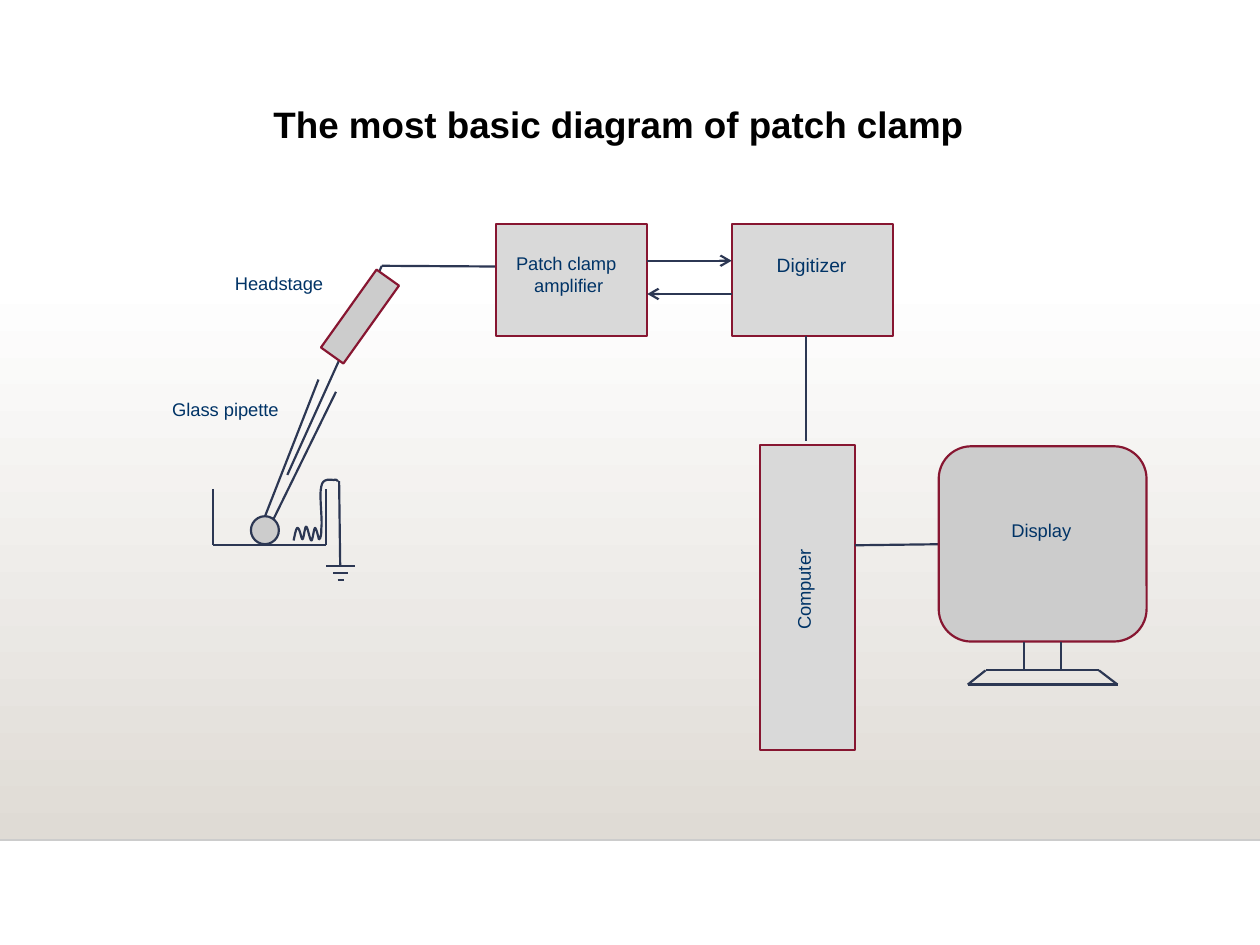
from itertools import pairwise

from lxml import etree
from pptx import Presentation
from pptx.dml.color import RGBColor
from pptx.enum import shapes, text
from pptx.oxml import ns
from pptx.util import Pt

COLORS = {
    "title": "000000", "label": "003366", "wire": "2C3753", "border": "871631",
    "panel": "D9D9D9", "device": "CCCCCC", "band_top": "FFFFFF",
    "band_bottom": "DFDBD5", "rule": "CCCCCC",
}
FONT = "Arial"
LINE_WIDTH = 1.25
CURVE_STEPS = 8
# Bath electrode, in hundredths of an inch: start, then Bézier controls and ends
COIL_UNIT = 0.72
COIL_START = (0, 50)
COIL_CURVES = [
    ((1, 45), (2, 40), (3, 40)), ((5, 40), (6, 49), (7, 49)),
    ((8, 49), (9, 38), (10, 39)), ((11, 39), (13, 50), (14, 50)),
    ((15, 51), (16, 40), (17, 40)), ((18, 40), (20, 49), (20, 49)),
    ((21, 49), (22, 47), (22, 40)), ((23, 33), (20, 13), (22, 7)),
    ((23, 0), (30, 2), (32, 2)), ((34, 1), (35, 3), (35, 3)),
]


def rgb(name):
    return RGBColor.from_string(COLORS[name])


def add_block(page, kind, left, top, width, height, fill, border="border"):
    block = page.shapes.add_shape(kind, Pt(left), Pt(top), Pt(width), Pt(height))
    block.shadow.inherit = False
    block.fill.solid()
    block.fill.fore_color.rgb = rgb(fill)
    block.line.color.rgb = rgb(border)
    block.line.width = Pt(LINE_WIDTH)
    return block


def add_line(page, start, end, color="wire", width=LINE_WIDTH, arrow=False):
    line = page.shapes.add_connector(
        shapes.MSO_CONNECTOR.STRAIGHT, *(Pt(value) for value in (*start, *end)))
    line.line.color.rgb = rgb(color)
    line.line.width = Pt(width)
    if arrow:
        etree.SubElement(line.line._get_or_add_ln(), ns.qn("a:tailEnd"), type="arrow")
    etree.SubElement(line._element.spPr, ns.qn("a:effectLst"))


def add_path(page, points):
    """Join consecutive points with straight lines."""
    for start, end in pairwise(points):
        add_line(page, start, end)


def add_label(page, left, top, width, height, *lines, size=10.5):
    box = page.shapes.add_textbox(Pt(left), Pt(top), Pt(width), Pt(height))
    frame = box.text_frame
    frame.word_wrap = True
    frame.text = "\n".join(lines)
    for para in frame.paragraphs:
        para.alignment = text.PP_ALIGN.CENTER
        para.font.name = FONT
        para.font.size = Pt(size)
        para.font.color.rgb = rgb("label")
    return box


def add_backdrop(page, left, top, width, height):
    band = page.shapes.add_shape(
        shapes.MSO_SHAPE.RECTANGLE, Pt(left), Pt(top), Pt(width), Pt(height))
    band.shadow.inherit = False
    band.line.fill.background()
    band.fill.gradient()
    band.fill.gradient_angle = 270
    for stop, name in zip(band.fill.gradient_stops, ("band_top", "band_bottom")):
        stop.color.rgb = rgb(name)
    bottom = top + height
    add_line(page, (left, bottom), (left + width, bottom), "rule", 1)


def set_title(page, left, top, width, height):
    title = page.shapes.title
    title.left, title.top, title.width, title.height = map(Pt, (left, top, width, height))
    frame = title.text_frame
    frame.text = "The most basic diagram of patch clamp"
    frame.vertical_anchor = text.MSO_ANCHOR.TOP
    para = frame.paragraphs[0]
    para.alignment = text.PP_ALIGN.CENTER
    para.font.name = FONT
    para.font.size = Pt(21)
    para.font.bold = True
    para.font.color.rgb = rgb("title")


def bezier(start, first, second, end):
    """Points along a cubic curve, without its start."""
    for step in range(1, CURVE_STEPS + 1):
        t = step / CURVE_STEPS
        weights = ((1 - t) ** 3, 3 * t * (1 - t) ** 2, 3 * t * t * (1 - t), t ** 3)
        yield tuple(sum(w * p[axis] for w, p in zip(weights, (start, first, second, end)))
                    for axis in (0, 1))


def add_coil(page, left, top):
    points = [COIL_START]
    for curve in COIL_CURVES:
        points.extend(bezier(points[-1], *curve))
    placed = [(Pt(left + x * COIL_UNIT), Pt(top + y * COIL_UNIT)) for x, y in points]
    builder = page.shapes.build_freeform(*placed[0])
    builder.add_line_segments(placed[1:], close=False)
    coil = builder.convert_to_shape()
    coil.shadow.inherit = False
    coil.fill.background()
    coil.line.color.rgb = rgb("wire")
    coil.line.width = Pt(LINE_WIDTH)


def add_ground(page, center, top):
    add_line(page, (center - 1, top - 48.3), (center - 0.4, top))
    for drop, width in ((0, 16.6), (4.3, 8.6), (7.9, 3.6)):
        add_line(page, (center - width / 2, top + drop), (center + width / 2, top + drop))


def add_recording_rig(page, left, top):
    """Bath with cell, pipette, headstage and grounded electrode."""
    def at(x, y):
        return left + x, top + y

    add_path(page, [at(41.7, 143.4), at(41.7, 175.4), at(106.5, 175.4), at(106.5, 143.4)])
    add_block(page, shapes.MSO_SHAPE.OVAL, *at(63.4, 159), 16, 16, "device", "wire")
    add_line(page, at(71.6, 158.6), at(102, 80.9))
    add_line(page, at(76.4, 160.4), at(112, 87.9))
    add_path(page, [at(84.2, 135.4), at(138.2, 15.9), at(218.8, 16.4)])
    add_coil(page, *at(87.8, 136.9))
    add_ground(page, *at(114.8, 187.3))
    headstage = add_block(
        page, shapes.MSO_SHAPE.RECTANGLE, *at(117.8, 17.6), 15.8, 54.7, "device")
    headstage.rotation = 35.5
    add_label(page, *at(2.1, 87.9), 93.6, 20.2, "Glass pipette")
    add_label(page, *at(41.7, 15.9), 75.6, 20.2, "Headstage")


def add_signal_chain(page, left, top):
    """Amplifier and digitizer, with the line down to the computer."""
    height, amplifier, digitizer = 64, 86.4, 92
    far = left + 134.6
    for x, width in ((left, amplifier), (far, digitizer)):
        add_block(page, shapes.MSO_SHAPE.RECTANGLE, x, top, width, height, "panel")
    near = left + amplifier
    add_line(page, (near, top + 21), (far, top + 21), arrow=True)
    add_line(page, (far, top + 40), (near, top + 40), arrow=True)
    add_line(page, (left + 177.3, top + height), (left + 177.3, top + 124))
    add_label(page, left - 5.6, top + 12.4, 91.4, 32.4, "Patch clamp", " amplifier")
    add_label(page, far, top + 13, 91.4, 20.9, "Digitizer", size=11)


def add_computer(page, left, top):
    width, height = 54.4, 174.2
    add_block(page, shapes.MSO_SHAPE.RECTANGLE, left, top, width, height, "panel")
    add_line(page, (left + width, top + 57.4), (left + 102.2, top + 56.8))
    label = add_label(page, left - 41.8, top + 72, 135.4, 21.6, "Computer")
    label.rotation = 270


def add_display(page, left, top):
    width, height = 118.8, 111.6
    shelf, floor = top + 128.1, top + 136.2
    add_block(page, shapes.MSO_SHAPE.ROUNDED_RECTANGLE, left, top, width, height, "device")
    base = [(left + 16.6, floor), (left + 102.2, floor),
            (left + 91.6, shelf), (left + 26.8, shelf)]
    add_path(page, base + base[:1])
    for x in (48.8, 70):
        add_line(page, (left + x, top + height), (left + x, shelf))
    add_label(page, left + 13, top + 38.2, 91.4, 26.6, "Display")


def main():
    deck = Presentation()
    deck.slide_width, deck.slide_height = Pt(720), Pt(540)
    page = deck.slides.add_slide(deck.slide_layouts[5])
    add_backdrop(page, 0, 158.4, 720, 321.6)
    set_title(page, 104.4, 54.7, 498.2, 40.3)
    add_recording_rig(page, 80, 136)
    add_signal_chain(page, 283.5, 128)
    add_computer(page, 434.2, 254.2)
    add_display(page, 536.4, 255)
    deck.save("out.pptx")


if __name__ == "__main__":
    main()
